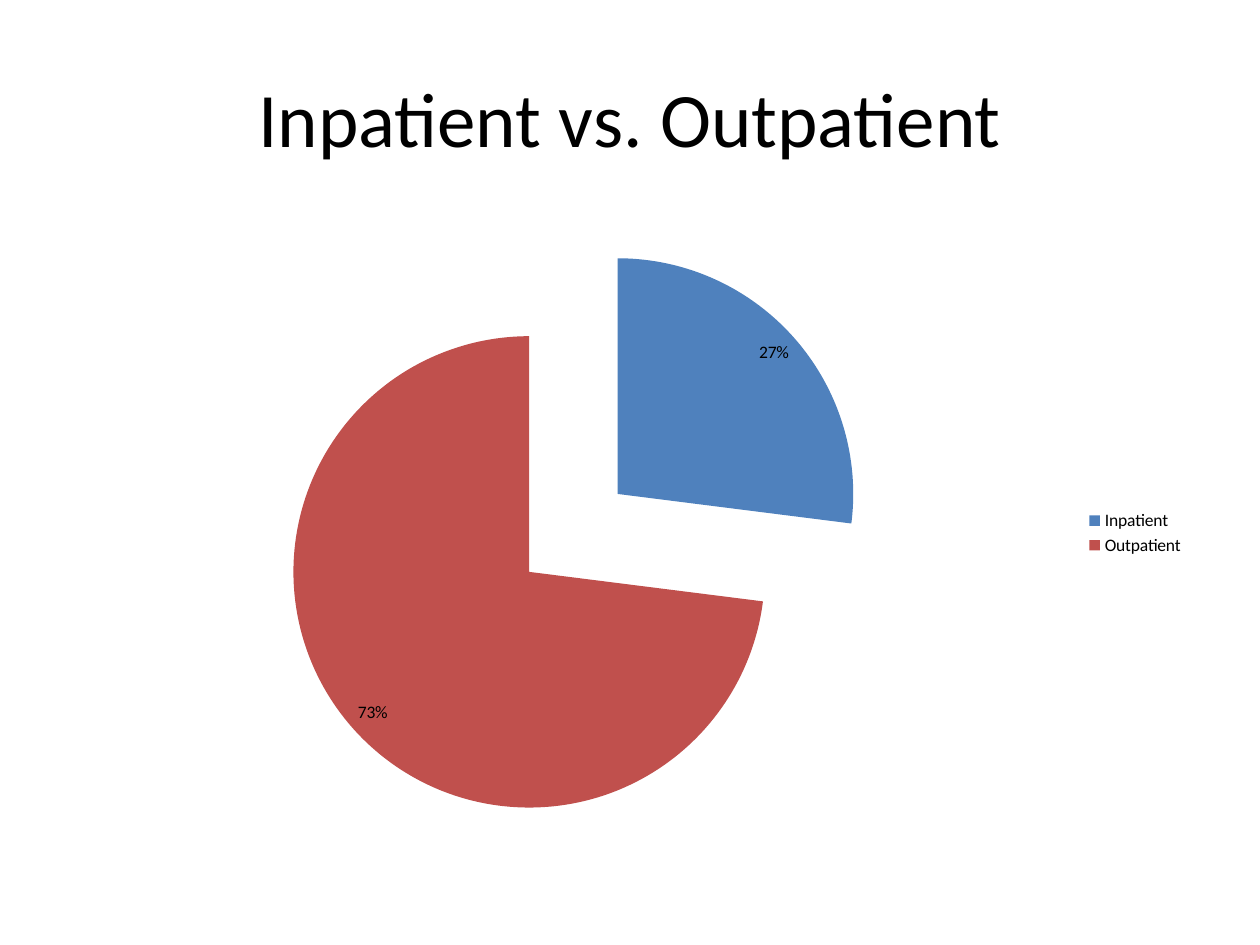
from pptx import Presentation
from pptx.chart.data import CategoryChartData as Data
from pptx.dml.color import RGBColor as RGB
from pptx.enum.chart import XL_CHART_TYPE as Kind
from pptx.enum.chart import XL_LABEL_POSITION as Spot
from pptx.enum.chart import XL_LEGEND_POSITION as Side
from pptx.enum.text import MSO_ANCHOR as Anchor
from pptx.enum.text import PP_ALIGN as Align
from pptx.oxml import parse_xml
from pptx.oxml.ns import nsdecls
from pptx.util import Pt

SCALE = 914400 / 126  # EMU per px
FONT = "Calibri"
COLORS = {"text": "000000", "Inpatient": "4F81BD", "Outpatient": "C0504D"}
SHARES = {"Inpatient": 0.27, "Outpatient": 0.73}


def px(n):
    return round(n * SCALE)


def style(font, size):
    font.name = FONT
    font.size = Pt(size)
    font.color.rgb = RGB.from_string(COLORS["text"])


def add_title(slide, box, text):
    title = slide.shapes.title
    title.left, title.top, title.width, title.height = map(px, box)
    frame = title.text_frame
    frame.text = text
    frame.vertical_anchor = Anchor.MIDDLE
    para = frame.paragraphs[0]
    para.alignment = Align.CENTER
    style(para.font, 44)


def add_pie(slide, box, shares):
    data = Data(number_format="0%")
    data.categories = list(shares)
    data.add_series("Series 1", list(shares.values()))
    chart = slide.shapes.add_chart(Kind.PIE, *map(px, box), data).chart
    style(chart.font, 10)
    chart.has_title = False

    # Legend
    chart.has_legend = True
    chart.legend.position = Side.RIGHT
    chart.legend.include_in_layout = False

    # Slices, pulled apart
    plot = chart.plots[0]
    plot.vary_by_categories = True
    series = plot.series[0]
    for i, name in enumerate(shares):
        fill = series.points[i].format.fill
        fill.solid()
        fill.fore_color.rgb = RGB.from_string(COLORS[name])
    burst = parse_xml(f'<c:explosion {nsdecls("c")} val="25"/>')
    series._element.xpath("c:dPt")[0].addprevious(burst)

    # Value labels
    labels = series.data_labels
    labels.show_value = True
    labels.number_format = "0%"
    labels.number_format_is_linked = False
    labels.position = Spot.INSIDE_END
    style(labels.font, 10)


def main():
    deck = Presentation()
    deck.slide_width, deck.slide_height = px(1260), px(945)
    slide = deck.slides.add_slide(deck.slide_layouts[5])  # title only
    add_title(slide, (63, 38, 1134, 158), "Inpatient vs. Outpatient")
    add_pie(slide, (63, 221, 1134, 624), SHARES)
    deck.save("out.pptx")


if __name__ == "__main__":
    main()
